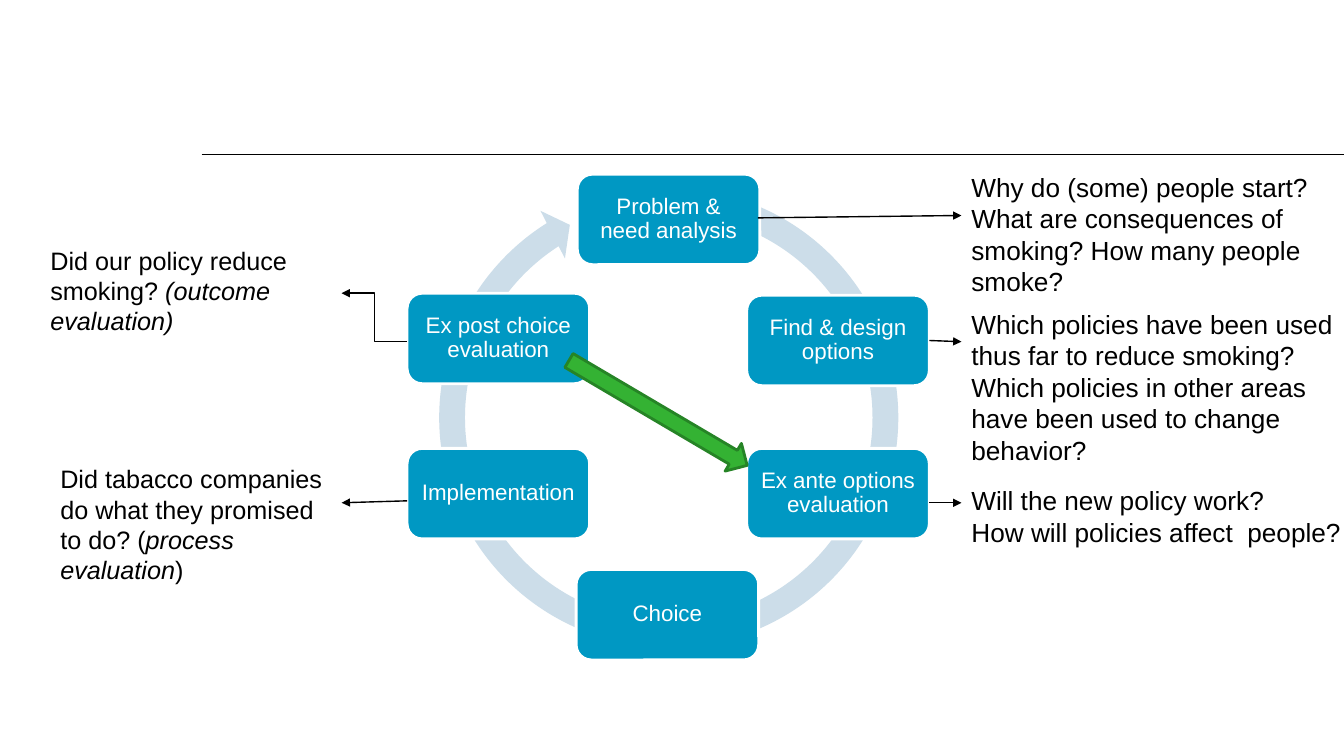
from dataclasses import dataclass

from lxml.etree import SubElement
from pptx import Presentation
from pptx.dml.color import RGBColor
from pptx.enum.shapes import MSO_CONNECTOR, MSO_SHAPE
from pptx.enum.text import MSO_ANCHOR, MSO_AUTO_SIZE, PP_ALIGN
from pptx.oxml.ns import qn
from pptx.util import Cm, Pt


@dataclass(frozen=True)
class Theme:
    """Colours, font and sizes of the slide."""
    font: str = "Arial"
    black: RGBColor = RGBColor(0x00, 0x00, 0x00)
    white: RGBColor = RGBColor(0xFF, 0xFF, 0xFF)
    ring: RGBColor = RGBColor(0xCC, 0xDD, 0xE9)
    step: RGBColor = RGBColor(0x00, 0x98, 0xC3)
    feedback: RGBColor = RGBColor(0x34, 0xB2, 0x33)
    feedback_edge: RGBColor = RGBColor(0x26, 0x84, 0x26)
    step_size: Pt = Pt(16)
    answer_size: Pt = Pt(18)
    question_size: Pt = Pt(18.7)
    thin: Pt = Pt(1)
    thick: Pt = Pt(2)


@dataclass(frozen=True)
class Box:
    """A region in centimetres."""
    left: float
    top: float
    width: float
    height: float

    def inner(self, left, top, width, height):
        """Return a box placed relative to this one."""
        return Box(self.left + left, self.top + top, width, height)

    def lengths(self):
        """Return the four lengths that python-pptx expects."""
        return Cm(self.left), Cm(self.top), Cm(self.width), Cm(self.height)


@dataclass(frozen=True)
class Note:
    """A text beside the cycle; its paragraphs are lists of (text, italic)."""
    box: tuple
    paragraphs: list
    inset: float = 0.25
    wrap: bool = True
    grow: bool = True


THEME = Theme()
STEP_WIDTH, STEP_HEIGHT = 4.6, 2.28
STEPS = [
    ("Problem & need analysis", 4.29, 0),
    ("Find & design options", 8.56, 3.05),
    ("Ex ante options evaluation", 8.56, 6.91),
    ("Choice", 4.26, 9.96),
    ("Implementation", 0, 6.91),
    ("Ex post choice evaluation", 0, 3),
]
QUESTIONS = [
    Note((0, 0, 9.25, 3.45), [
        [("Why do (some) people start?", False)],
        [("What are consequences of smoking? How many people smoke?", False)],
    ]),
    Note((0, 3.45, 9.86, 4.24), [
        [("Which policies have been used thus far to reduce smoking?", False)],
        [("Which policies in other areas have been used to change behavior?", False)],
    ]),
    Note((0, 7.9, 9.88, 1.85), [
        [("Will the new policy work?", False)],
        [("How will policies affect  people?", False)],
    ], wrap=False),
]
ANSWERS = [
    Note((0, 0, 8.59, 2.77), [
        [("Did our policy reduce smoking? ", False), ("(outcome evaluation)", True)],
    ], inset=0, grow=False),
    Note((0, 5.51, 7.34, 3.33), [
        [("Did tabacco companies do what they promised to do? (", False),
         ("process evaluation", True), (")", False)],
    ]),
]
STRAIGHT, ELBOW = MSO_CONNECTOR.STRAIGHT, MSO_CONNECTOR.ELBOW
LINKS = [
    (STRAIGHT, (8.84, 1.1), (13.97, 1.04)),
    (STRAIGHT, (13.16, 4.19), (13.97, 4.22)),
    (STRAIGHT, (13.16, 8.28), (13.97, 8.28)),
    (ELBOW, (0, 4.22), (-1.65, 3)),
    (STRAIGHT, (0, 8.23), (-1.65, 8.28)),
]


def format_run(run, size, color, italic=False):
    """Give a run its font, size, colour and slant."""
    run.font.name = THEME.font
    run.font.size = size
    run.font.color.rgb = color
    run.font.italic = italic


def add_filled_shape(slide, kind, box, fill, edge=None):
    """Add a flat preset shape, outlined when an edge colour is given."""
    shape = slide.shapes.add_shape(kind, *box.lengths())
    shape.shadow.inherit = False
    shape.fill.solid()
    shape.fill.fore_color.rgb = fill
    if edge is None:
        shape.line.fill.background()
    else:
        shape.line.color.rgb = edge
        shape.line.width = THEME.thick
    return shape


def add_line(slide, kind, start, end, arrow=False):
    """Add a thin black connector between two points."""
    connector = slide.shapes.add_connector(kind, *map(Cm, start + end))
    connector.line.color.rgb = THEME.black
    connector.line.width = THEME.thin
    if arrow:
        SubElement(connector.line._get_or_add_ln(), qn("a:tailEnd"), type="triangle")
    SubElement(connector._element.spPr, qn("a:effectLst"))


def add_step(slide, box, label):
    """Add one labelled step of the policy cycle."""
    shape = add_filled_shape(slide, MSO_SHAPE.ROUNDED_RECTANGLE, box, THEME.step, THEME.white)
    frame = shape.text_frame
    frame.word_wrap = True
    frame.vertical_anchor = MSO_ANCHOR.MIDDLE
    frame.margin_left = frame.margin_right = Cm(0.18)
    frame.margin_top = frame.margin_bottom = Cm(0.18)
    frame.text = label
    paragraph = frame.paragraphs[0]
    paragraph.alignment = PP_ALIGN.CENTER
    paragraph.line_spacing = 0.9
    format_run(paragraph.runs[0], THEME.step_size, THEME.white)


def add_cycle(slide, box):
    """Draw the ring and the six steps on it."""
    ring_box = box.inner(0.46, 0, 12.27, 12.27)
    ring = add_filled_shape(slide, MSO_SHAPE.CIRCULAR_ARROW, ring_box, THEME.ring)
    for index, value in enumerate((0.053, 3.126, 142.569, 171.102, 0.055)):
        ring.adjustments[index] = value
    for label, left, top in STEPS:
        add_step(slide, box.inner(left, top, STEP_WIDTH, STEP_HEIGHT), label)


def add_notes(slide, box, notes, size):
    """Place a column of notes."""
    for note in notes:
        shape = slide.shapes.add_textbox(*box.inner(*note.box).lengths())
        frame = shape.text_frame
        frame.word_wrap = note.wrap
        frame.auto_size = MSO_AUTO_SIZE.SHAPE_TO_FIT_TEXT if note.grow else MSO_AUTO_SIZE.NONE
        frame.margin_left = Cm(note.inset)
        for index, parts in enumerate(note.paragraphs):
            paragraph = frame.add_paragraph() if index else frame.paragraphs[0]
            for text, italic in parts:
                run = paragraph.add_run()
                run.text = text
                format_run(run, size, THEME.black, italic)


def add_links(slide, box):
    """Connect the steps with their notes and draw the feedback arrow."""
    for kind, start, end in LINKS:
        points = [(box.left + x, box.top + y) for x, y in (start, end)]
        add_line(slide, kind, *points, arrow=True)
    arrow_box = box.inner(5.92, 3.41, 0.81, 5.21)
    arrow = add_filled_shape(slide, MSO_SHAPE.DOWN_ARROW, arrow_box,
                             THEME.feedback, THEME.feedback_edge)
    arrow.rotation = 300.5


def build_policy_cycle(slide, box):
    """Compose the policy cycle slide within its box."""
    add_line(slide, STRAIGHT, (box.left + 5.08, box.top + 3.89), (box.width, box.top + 3.89))
    cycle = box.inner(10.26, 4.39, 13.16, 12.24)
    add_cycle(slide, cycle)
    add_notes(slide, box.inner(24.23, 4.19, 9.64, 9.75), QUESTIONS, THEME.question_size)
    add_notes(slide, box.inner(1.27, 6.05, 8.59, 8.84), ANSWERS, THEME.answer_size)
    add_links(slide, cycle)


def main():
    """Create the presentation and save it."""
    presentation = Presentation()
    page = Box(0, 0, 33.87, 19.05)
    presentation.slide_width = Cm(page.width)
    presentation.slide_height = Cm(page.height)
    slide = presentation.slides.add_slide(presentation.slide_layouts[6])
    build_policy_cycle(slide, page)
    presentation.save("out.pptx")


if __name__ == "__main__":
    main()
